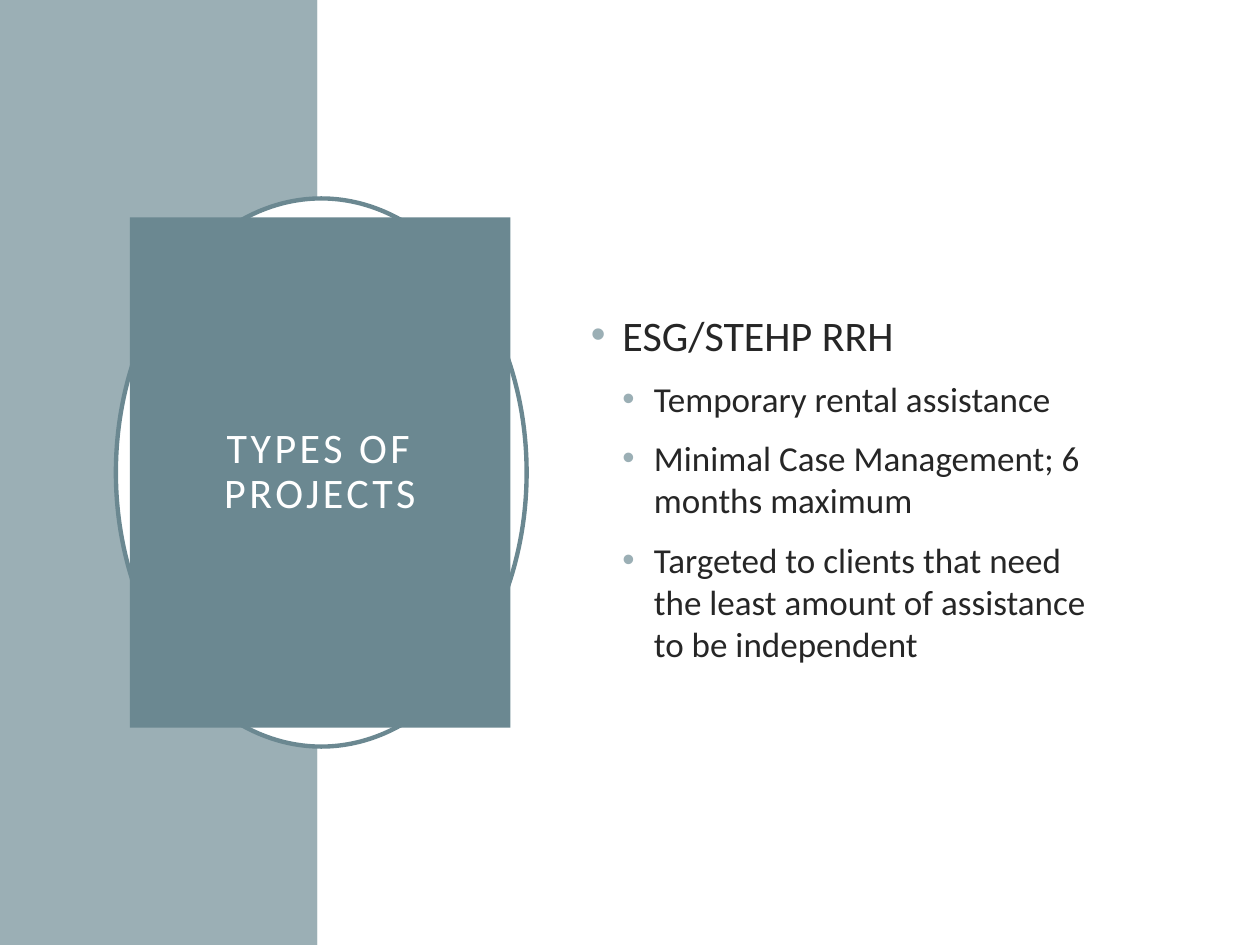
import pptx
import pptx.dml.color
import pptx.enum.shapes
import pptx.enum.text
import pptx.oxml.ns
import pptx.util
from lxml import etree

WIDE, HIGH = 10, 7.5
SHAPE = pptx.enum.shapes.MSO_SHAPE
ALIGN = pptx.enum.text.PP_ALIGN
TITLE = "TYPES OF PROJECTS"
ITEMS = [
    (0, "ESG/STEHP RRH"),
    (1, "Temporary rental assistance"),
    (1, "Minimal Case Management; 6 months maximum"),
    (1, "Targeted to clients that need the least amount of assistance to be independent"),
]


def color(code):
    return pptx.dml.color.RGBColor.from_string(code)


def paint(shape, code):
    shape.fill.solid()
    shape.fill.fore_color.rgb = color(code)


def add(parent, tag, **attrs):
    return etree.SubElement(parent, pptx.oxml.ns.qn(tag), attrs)


def write(par, text, size, ink, font, align=ALIGN.LEFT, lead=1.0, gap=0, track=0):
    par.alignment, par.line_spacing = align, lead
    par.space_before = pptx.util.Pt(gap)
    run = par.add_run()
    run.text = text
    run.font.size, run.font.name = pptx.util.Pt(size), font
    run.font.color.rgb = color(ink)
    if track:
        run.font._element.set("spc", str(track * 100))


class Deck:
    font, ink, pale, deep, white = "Calibri", "262626", "9BAFB5", "6B8891", "FFFFFF"

    def __init__(self, show):
        self.slide = show.slides.add_slide(show.slide_layouts[1])

    def place(self, holder, box, inset):
        """Move a placeholder to the front and set its box, in shares of the slide."""
        holder.element.getparent().append(holder.element)
        holder.left, holder.top, holder.width, holder.height = self.spot(*box)
        frame = holder.text_frame
        frame.word_wrap = True
        frame.auto_size = pptx.enum.text.MSO_AUTO_SIZE.NONE
        frame.vertical_anchor = pptx.enum.text.MSO_ANCHOR.MIDDLE
        frame.margin_left = frame.margin_right = pptx.util.Inches(inset[0])
        frame.margin_top = frame.margin_bottom = pptx.util.Inches(inset[1])
        return frame

    def spot(self, left, top, width, height):
        return [pptx.util.Inches(share * full) for share, full in
                zip((left, top, width, height), (WIDE, HIGH, WIDE, HIGH))]

    def form(self, kind, box, fill, line=None):
        shape = self.slide.shapes.add_shape(kind, *self.spot(*box))
        shape.shadow.inherit = False
        paint(shape, fill)
        if line:
            shape.line.color.rgb = color(line)
            shape.line.width = pptx.util.Pt(2.5)
        else:
            shape.line.fill.background()

    def title(self, text, box):
        holder = self.slide.shapes.title
        paint(holder, self.deep)
        frame = self.place(holder, box, (0.2, 0.2))
        write(frame.paragraphs[0], text, 24, self.white, self.font,
              align=ALIGN.CENTER, lead=0.9, track=2)

    def list(self, items, box):
        frame = self.place(self.slide.placeholders[1], box, (0.1, 0.05))
        for i, (level, text) in enumerate(items):
            par = frame.add_paragraph() if i else frame.paragraphs[0]
            par.level = level
            write(par, text, 24 - 4 * level, self.ink, self.font, gap=10)
            self.bullet(par, level)

    def bullet(self, par, level):
        step = pptx.util.Inches(0.25)
        prop = par._p.get_or_add_pPr()
        prop.set("marL", str(step * (level + 1)))
        prop.set("indent", str(-step))
        add(add(prop, "a:buClr"), "a:srgbClr", val=self.pale)
        add(prop, "a:buFont", typeface="Arial")
        add(prop, "a:buChar", char="•")


def main():
    show = pptx.Presentation()
    show.slide_width = pptx.util.Inches(WIDE)
    show.slide_height = pptx.util.Inches(HIGH)
    deck = Deck(show)

    # Side band and main panel
    band = 0.252
    deck.form(SHAPE.RECTANGLE, (0, 0, band, 1), deck.pale)
    deck.form(SHAPE.RECTANGLE, (band, 0, 1 - band, 1), deck.white)

    # Ring behind the title block
    deck.form(SHAPE.OVAL, (0.092, 0.21, 0.326, 0.58), deck.white, deck.deep)
    deck.title(TITLE, (0.103, 0.23, 0.302, 0.54))

    # Project list
    deck.list(ITEMS, (0.459, 0.08, 0.436, 0.87))

    show.save("out.pptx")


if __name__ == "__main__":
    main()
